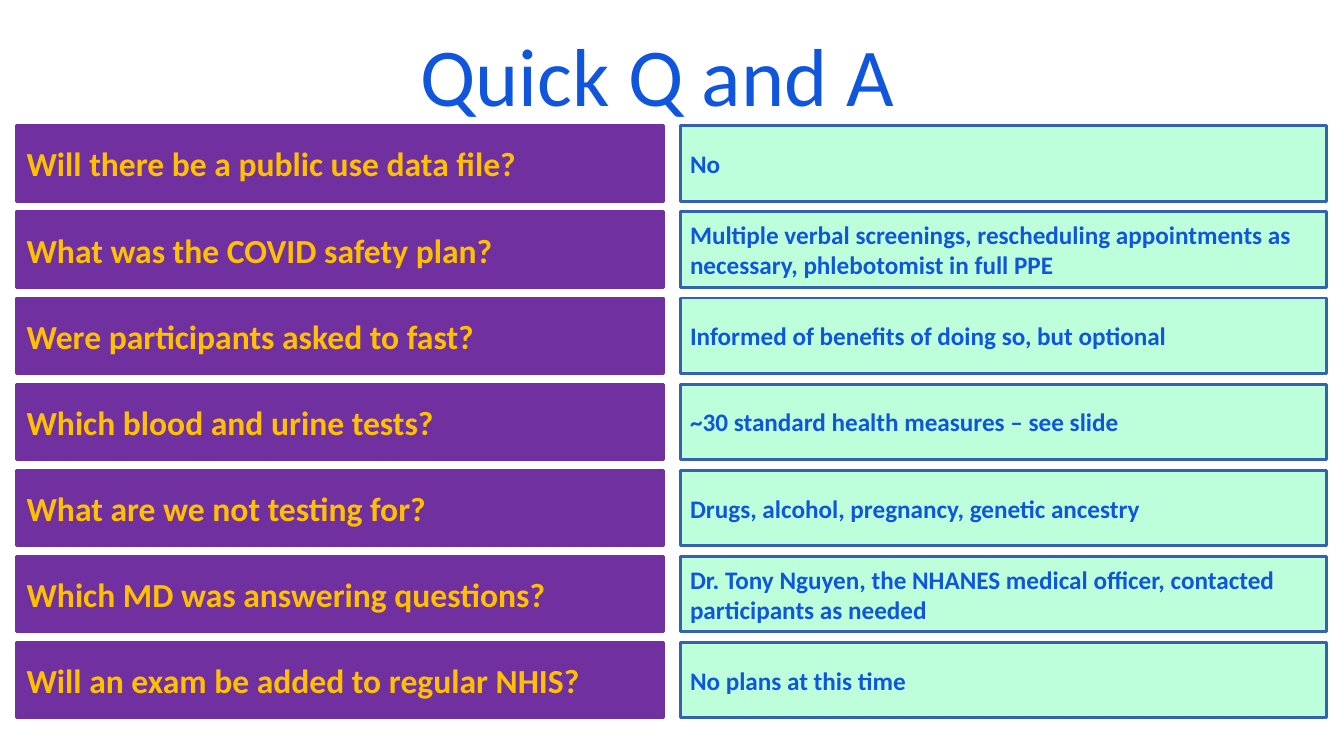
"""Build a slide of quick questions and answers in two columns."""
from pptx import Presentation
from pptx.dml.color import RGBColor
from pptx.enum.shapes import MSO_SHAPE
from pptx.enum.text import MSO_ANCHOR, PP_ALIGN
from pptx.util import Cm, Pt

COLORS = {
    "blue": "0F56DC",
    "border": "3661B3",
    "mint": "BDFFDB",
    "purple": "7030A0",
    "gold": "FFC000",
}

ROWS = [
    ("Will there be a public use data file?", "No"),
    ("What was the COVID safety plan?",
     "Multiple verbal screenings, rescheduling appointments as necessary, "
     "phlebotomist in full PPE"),
    ("Were participants asked to fast?",
     "Informed of benefits of doing so, but optional"),
    ("Which blood and urine tests?",
     "~30 standard health measures – see slide"),
    ("What are we not testing for?",
     "Drugs, alcohol, pregnancy, genetic ancestry"),
    ("Which MD was answering questions?",
     "Dr. Tony Nguyen, the NHANES medical officer, contacted participants "
     "as needed"),
    ("Will an exam be added to regular NHIS?", "No plans at this time"),
]

QUESTION_X, ANSWER_X = 0.42, 17.14
TOP, PITCH = 3.17, 2.17
BOX_W, BOX_H = 16.3, 1.9


class SlideBuilder:
    """Hold the style and the current slide."""

    font = "Calibri"

    def __init__(self, prs):
        self.slide = prs.slides.add_slide(prs.slide_layouts[6])

    def color(self, name):
        return RGBColor.from_string(COLORS[name])

    def set_text(self, tf, text, size, color, align, bold=False):
        tf.word_wrap = True
        p = tf.paragraphs[0]
        p.text = text
        p.alignment = align
        for r in p.runs:
            r.font.name = self.font
            r.font.size = Pt(size)
            r.font.bold = bold
            r.font.color.rgb = self.color(color)

    def title(self, text):
        sp = self.slide.shapes.add_textbox(Cm(1.96), Cm(0.38), Cm(29.2), Cm(3.68))
        tf = sp.text_frame
        tf.vertical_anchor = MSO_ANCHOR.TOP
        tf.margin_top = Cm(0.23)
        self.set_text(tf, text, 58.7, "blue", PP_ALIGN.CENTER)

    def box(self, x, y, text, size, color, fill, line):
        sp = self.slide.shapes.add_shape(
            MSO_SHAPE.RECTANGLE, Cm(x), Cm(y), Cm(BOX_W), Cm(BOX_H))
        sp.shadow.inherit = False
        sp.fill.solid()
        sp.fill.fore_color.rgb = self.color(fill)
        sp.line.color.rgb = self.color(line)
        sp.line.width = Pt(2)
        sp.text_frame.vertical_anchor = MSO_ANCHOR.MIDDLE
        self.set_text(sp.text_frame, text, size, color, PP_ALIGN.LEFT, bold=True)

    def question(self, y, text):
        self.box(QUESTION_X, y, text, 24, "gold", "purple", "purple")

    def answer(self, y, text):
        self.box(ANSWER_X, y, text, 18, "blue", "mint", "border")


def main():
    prs = Presentation()
    prs.slide_width, prs.slide_height = Cm(33.87), Cm(19.05)
    builder = SlideBuilder(prs)
    builder.title("Quick Q and A")
    for i, (question, answer) in enumerate(ROWS):
        y = TOP + i * PITCH
        builder.question(y, question)
        builder.answer(y, answer)
    prs.save("out.pptx")


if __name__ == "__main__":
    main()
